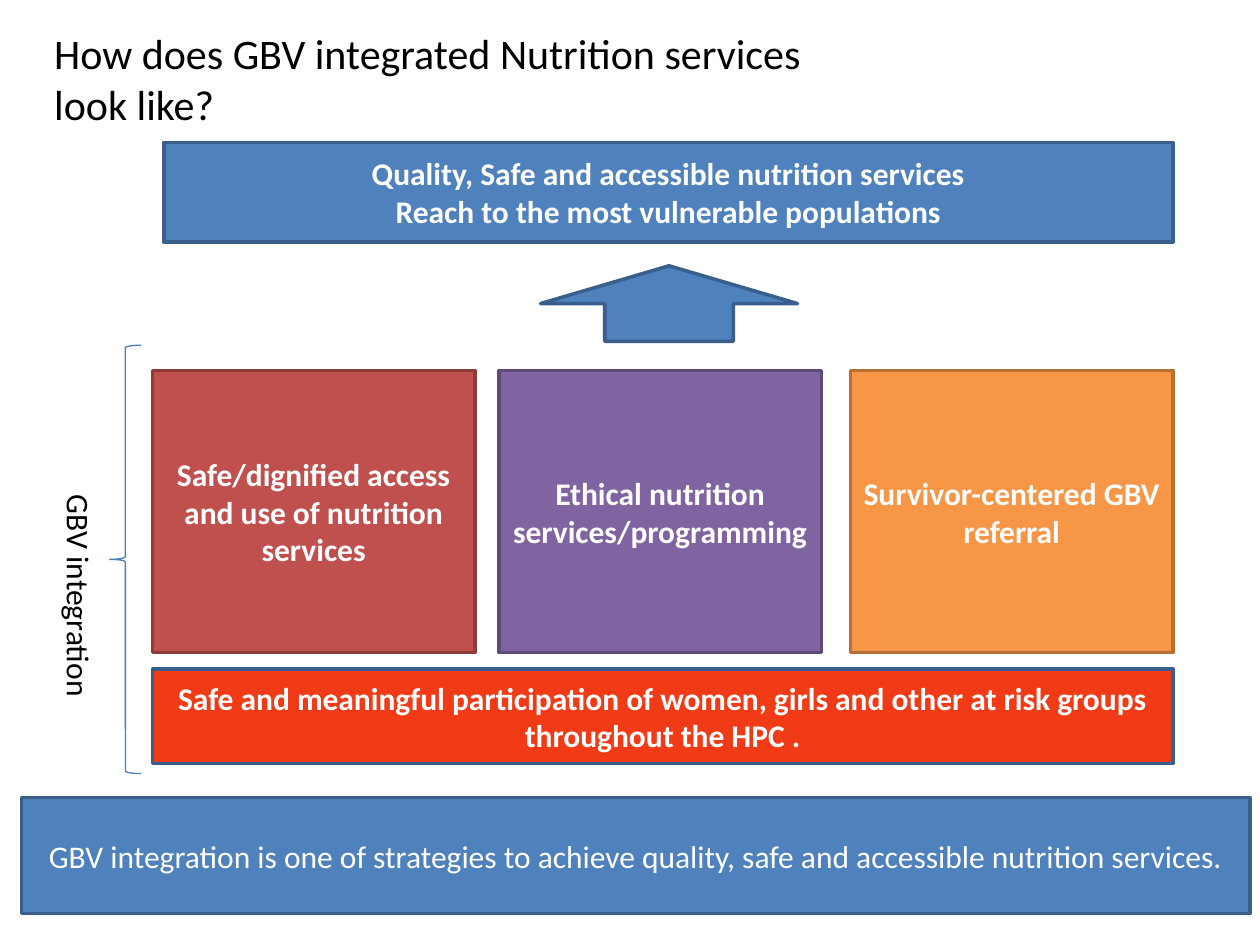
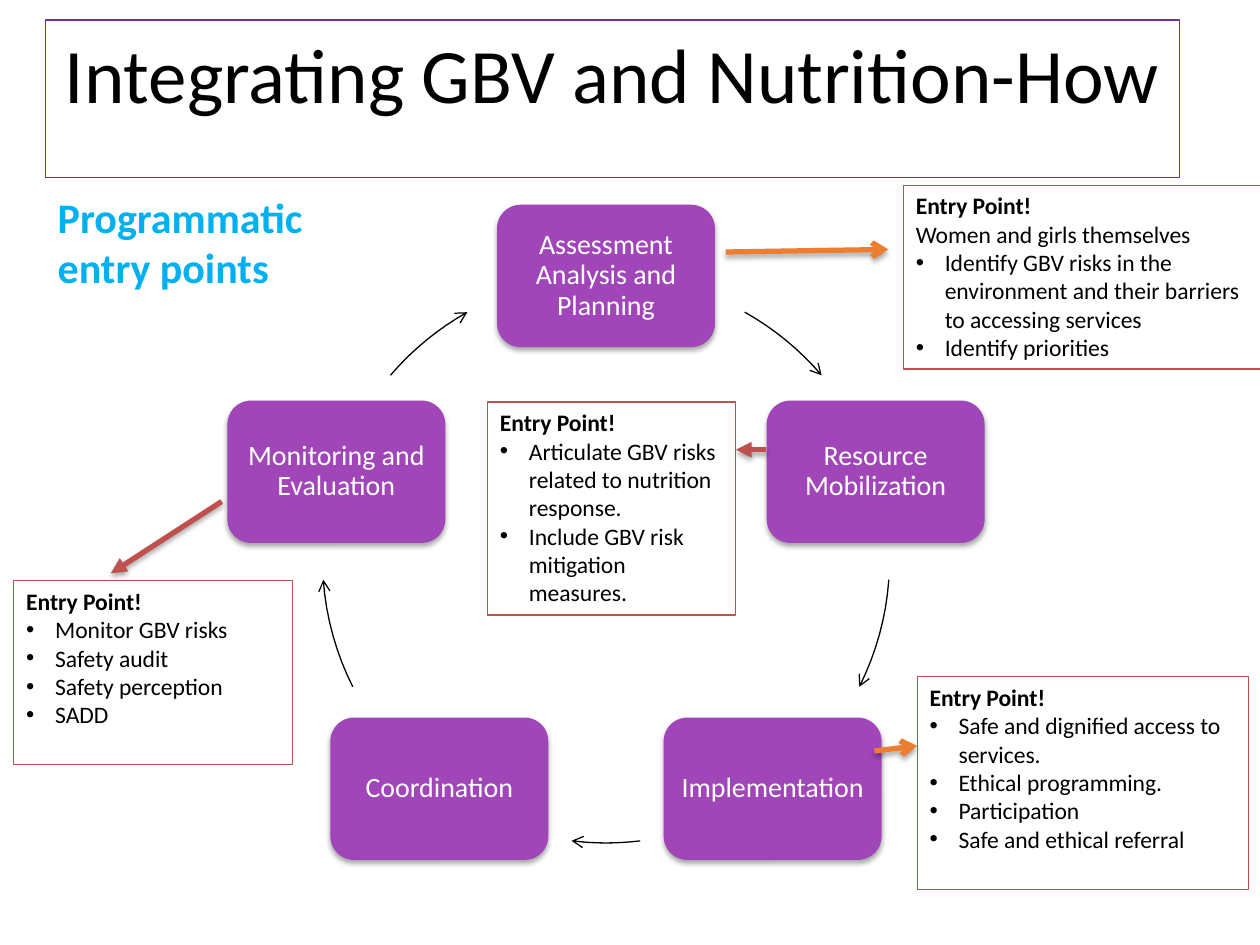
"""Build two slides on integrating GBV into nutrition services."""
from math import cos, radians, sin

from lxml.etree import SubElement
from pptx import Presentation
from pptx.dml.color import RGBColor
from pptx.enum.shapes import MSO_CONNECTOR, MSO_SHAPE
from pptx.enum.text import MSO_ANCHOR, MSO_AUTO_SIZE, PP_ALIGN
from pptx.oxml.ns import qn
from pptx.util import Inches, Pt

FONT = "Calibri"
BLACK = RGBColor(0x00, 0x00, 0x00)
WHITE = RGBColor(0xFF, 0xFF, 0xFF)
BLUE = RGBColor(0x4F, 0x81, 0xBD)
NAVY = RGBColor(0x3A, 0x5F, 0x8C)
BRACE = RGBColor(0x4B, 0x7E, 0xBC)
RED = RGBColor(0xC0, 0x50, 0x4D)
MAROON = RGBColor(0x8E, 0x3B, 0x39)
PURPLE = RGBColor(0x80, 0x64, 0xA2)
PLUM = RGBColor(0x5F, 0x4A, 0x78)
AMBER = RGBColor(0xF7, 0x96, 0x46)
BROWN = RGBColor(0xB7, 0x6F, 0x34)
SCARLET = RGBColor(0xF1, 0x3B, 0x17)
VIOLET = RGBColor(0xA0, 0x46, 0xB8)
FRAME = RGBColor(0x70, 0x30, 0xA0)
ORANGE = RGBColor(0xED, 0x7D, 0x31)
CYAN = RGBColor(0x00, 0xB0, 0xF0)

CENTER = (4.81, 4.44)
RADIUS = 2.25
STAGES = ["Assessment Analysis and Planning", "Resource Mobilization",
          "Implementation", "Coordination", "Monitoring and Evaluation"]
ARCS = [(-60.7, -40.5), (4.1, 26.7), (83.1, 97), (153.3, 175.9), (220.5, 240.7)]
PILLARS = [
    (1.21, "Safe/dignified access and use of nutrition services", RED, MAROON),
    (3.96, "Ethical nutrition services/programming", PURPLE, PLUM),
    (6.75, "Survivor-centered GBV referral", AMBER, BROWN),
]
ENTRIES = [
    ((7.17, 1.47, 2.85, 1.46), ["Women and girls themselves"],
     ["Identify GBV risks in the environment and their barriers to accessing services",
      "Identify priorities"]),
    ((7.28, 5.37, 2.63, 1.69), [],
     ["Safe and dignified access to services.", "Ethical programming.",
      "Participation", "Safe and ethical referral"]),
    ((0.11, 4.61, 2.21, 1.46), [],
     ["Monitor GBV risks", "Safety audit", "Safety perception", "SADD"]),
    ((3.87, 3.19, 1.97, 1.69), [],
     ["Articulate GBV risks related to nutrition response.",
      "Include GBV risk mitigation measures."]),
]
LINKS = [
    ((5.76, 2), (7.05, 1.98), ORANGE, "arrow"),
    ((6.94, 5.96), (7.28, 5.92), ORANGE, "arrow"),
    ((6.08, 3.57), (5.84, 3.57), RED, "triangle"),
    ((1.76, 3.98), (0.88, 4.55), RED, "triangle"),
]


def style(para, size, color, bold=False, align=PP_ALIGN.LEFT):
    """Set the font and alignment of a paragraph."""
    para.alignment = align
    font = para.font
    font.name, font.size, font.bold = FONT, Pt(size), bold
    font.color.rgb = color


def write(shape, text, size, color, bold=False, align=PP_ALIGN.LEFT):
    """Fill a shape with evenly styled paragraphs."""
    frame = shape.text_frame
    frame.word_wrap = True
    frame.text = text
    for para in frame.paragraphs:
        style(para, size, color, bold, align)


def add_form(slide, kind, box, fill, line=None, width=2):
    """Add a preset shape without a shadow."""
    shape = slide.shapes.add_shape(kind, *map(Inches, box))
    paint(shape, fill, line, width)
    return shape


def paint(shape, fill, line, width):
    """Set fill and outline, and drop the shadow."""
    if fill is None:
        shape.fill.background()
    else:
        shape.fill.solid()
        shape.fill.fore_color.rgb = fill
    if line is None:
        shape.line.fill.background()
    else:
        shape.line.color.rgb = line
        shape.line.width = Pt(width)
    shape.shadow.inherit = False


def add_panel(slide, box, text, fill, line, bold=True):
    """Add a filled rectangle with centred white text."""
    panel = add_form(slide, MSO_SHAPE.RECTANGLE, box, fill, line)
    write(panel, text, 18, WHITE, bold, PP_ALIGN.CENTER)


def add_label(slide, box, text, size, color, bold=False):
    """Add a plain text box."""
    label = slide.shapes.add_textbox(*map(Inches, box))
    write(label, text, size, color, bold)
    return label


def set_title(slide, box, text, size, align):
    """Place and style the slide title."""
    title = slide.shapes.title
    title.left, title.top, title.width, title.height = map(Inches, box)
    write(title, text, size, BLACK, align=align)
    title.text_frame.vertical_anchor = MSO_ANCHOR.TOP
    title.text_frame.auto_size = MSO_AUTO_SIZE.NONE
    return title


def add_head(shape, kind):
    """Put an arrowhead at the end of a line."""
    SubElement(shape.element.spPr.find(qn("a:ln")), qn("a:tailEnd"), type=kind)


def add_shade(shape, alpha=35):
    """Give a shape a soft shadow below it."""
    props = shape.element.spPr
    effects = props.find(qn("a:effectLst"))
    if effects is None:
        effects = SubElement(props, qn("a:effectLst"))
    shade = SubElement(effects, qn("a:outerShdw"), blurRad=str(Pt(3.1)),
                       dist=str(Pt(1.8)), dir="5400000", rotWithShape="0")
    color = SubElement(shade, qn("a:srgbClr"), val=str(BLACK))
    SubElement(color, qn("a:alpha"), val=str(alpha * 1000))


def add_bullet(para):
    """Give a paragraph a hanging bullet."""
    props = para._p.get_or_add_pPr()
    props.set("marL", str(Inches(0.23)))
    props.set("indent", str(-Inches(0.23)))
    SubElement(props, qn("a:buFont"), typeface="Arial")
    SubElement(props, qn("a:buChar"), char="•")


def on_ring(angle):
    """Return the point of the cycle at an angle in degrees."""
    turn = radians(angle)
    return CENTER[0] + RADIUS * cos(turn), CENTER[1] + RADIUS * sin(turn)


def add_stage(slide, index, text):
    """Add one rounded stage of the cycle."""
    wide, high = 1.73, 1.13
    x, y = on_ring(72 * index - 90)
    stage = add_form(slide, MSO_SHAPE.ROUNDED_RECTANGLE,
                     (x - wide / 2, y - high / 2, wide, high), VIOLET)
    add_shade(stage)
    write(stage, text, 16, WHITE, align=PP_ALIGN.CENTER)
    stage.text_frame.margin_left = stage.text_frame.margin_right = Inches(0.06)
    stage.text_frame.paragraphs[0].line_spacing = 0.9


def add_arc(slide, start, end, steps=8):
    """Add a curved arrow along the cycle."""
    points = [tuple(map(Inches, on_ring(start + (end - start) * step / steps)))
              for step in range(steps + 1)]
    path = slide.shapes.build_freeform(*points[0])
    path.add_line_segments(points[1:], close=False)
    arc = path.convert_to_shape()
    paint(arc, None, BLACK, 0.75)
    add_head(arc, "arrow")


def add_entry(slide, box, plain, points):
    """Add an outlined entry point with its list."""
    entry = add_form(slide, MSO_SHAPE.RECTANGLE, box, None, RED, 0.75)
    frame = entry.text_frame
    frame.word_wrap = True
    frame.vertical_anchor = MSO_ANCHOR.TOP
    frame.text = "\n".join(["Entry Point!", *plain, *points])
    for index, para in enumerate(frame.paragraphs):
        if index > len(plain):
            add_bullet(para)
        style(para, 13.5, BLACK, bold=index == 0)


def add_link(slide, start, end, color, head):
    """Add a straight arrow from a stage to its entry point."""
    link = slide.shapes.add_connector(MSO_CONNECTOR.STRAIGHT,
                                      *map(Inches, start + end))
    link.line.color.rgb = color
    link.line.width = Pt(3)
    add_head(link, head)
    add_shade(link)


def build_model(slide):
    """Build the slide on what integrated services look like."""
    set_title(slide, (0.33, 0.17, 6.5, 0.91),
              "How does GBV integrated Nutrition services look like?",
              24, PP_ALIGN.LEFT)
    add_panel(slide, (1.3, 1.13, 8.01, 0.79),
              "Quality, Safe and accessible nutrition services\n"
              "Reach to the most vulnerable populations", BLUE, NAVY)
    for left, text, fill, line in PILLARS:
        add_panel(slide, (left, 2.94, 2.56, 2.24), text, fill, line)
    add_panel(slide, (1.21, 5.31, 8.1, 0.75),
              "Safe and meaningful participation of women, girls and other "
              "at risk groups throughout the HPC .", SCARLET, NAVY)
    add_form(slide, MSO_SHAPE.UP_ARROW, (4.29, 2.11, 2.04, 0.6), BLUE, NAVY)
    add_form(slide, MSO_SHAPE.LEFT_BRACE, (0.87, 2.74, 0.25, 3.4),
             None, BRACE, 0.75)
    side = add_label(slide, (0.33, 3.83, 0.5, 3.25), "GBV integration", 18, BLACK)
    side.text_frame._txBody.bodyPr.set("vert", "eaVert")
    add_panel(slide, (0.17, 6.33, 9.75, 0.92),
              "GBV integration is one of strategies to achieve quality, safe "
              "and accessible nutrition services.", BLUE, NAVY, bold=False)


def build_cycle(slide):
    """Build the slide on entry points in the programme cycle."""
    title = set_title(slide, (0.36, 0.16, 9, 1.25),
                      "Integrating GBV and Nutrition-How", 44, PP_ALIGN.CENTER)
    title.line.color.rgb = FRAME
    title.line.width = Pt(0.75)
    for index, text in enumerate(STAGES):
        add_stage(slide, index, text)
        add_arc(slide, *ARCS[index])
    for entry in ENTRIES:
        add_entry(slide, *entry)
    for link in LINKS:
        add_link(slide, *link)
    add_label(slide, (0.36, 1.47, 2.17, 0.91), "Programmatic entry points",
              24, CYAN, bold=True)


def main():
    """Build and save the deck."""
    deck = Presentation()
    deck.slide_width, deck.slide_height = Inches(10), Inches(7.5)
    for build in (build_model, build_cycle):
        build(deck.slides.add_slide(deck.slide_layouts[5]))
    deck.save("out.pptx")


if __name__ == "__main__":
    main()
